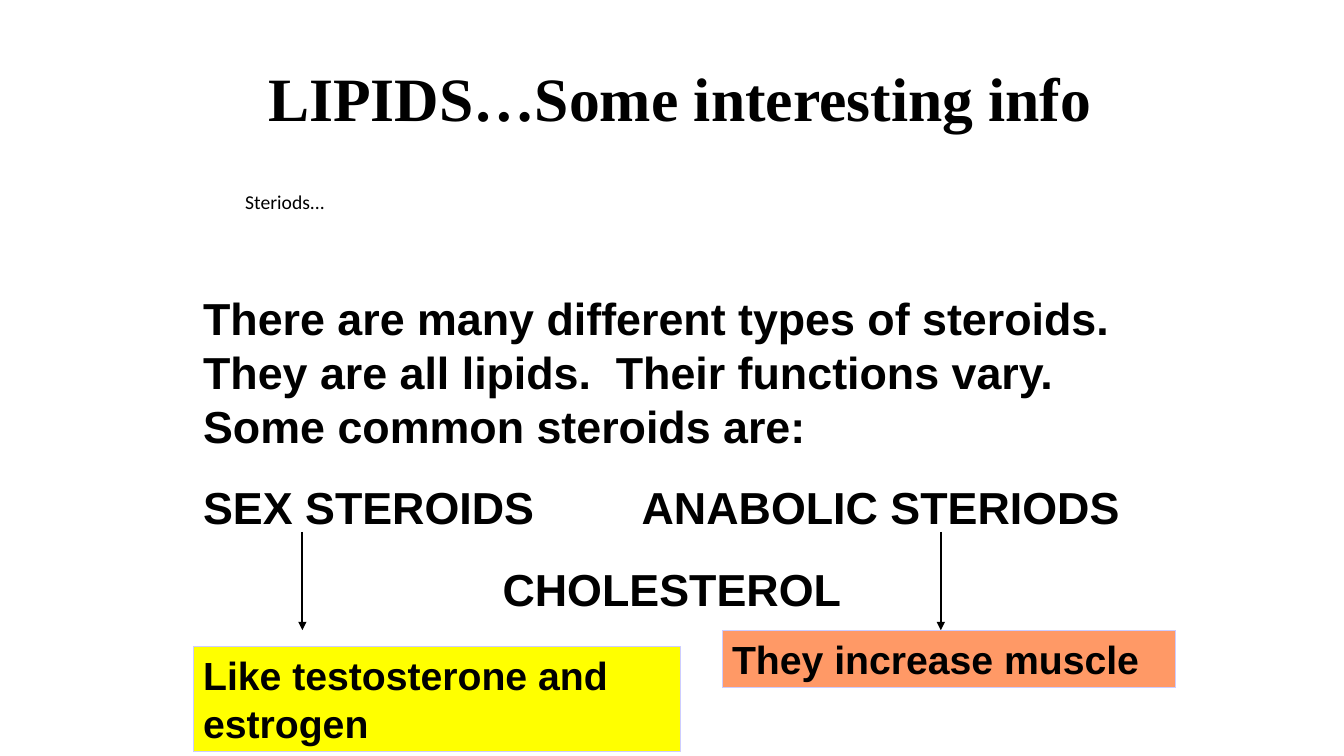
from dataclasses import dataclass

import pptx
import pptx.dml.color
import pptx.enum.shapes
import pptx.enum.text
import pptx.oxml.ns
import pptx.util
from lxml import etree

Cm = pptx.util.Cm
Pt = pptx.util.Pt
ALIGN = pptx.enum.text.PP_ALIGN
ANCHOR = pptx.enum.text.MSO_ANCHOR


@dataclass(frozen=True)
class Theme:
    ink: str = "000000"
    border: str = "CCCCFF"
    yellow: str = "FFFF00"
    orange: str = "FF9966"
    title_size: int = 44
    body_size: int = 32
    callout_size: int = 28
    note_size: int = 14
    title_font: str = "Times New Roman"
    body_font: str = "Arial"
    note_font: str = "Calibri"


THEME = Theme()
TITLE = {"name": THEME.title_font, "size": Pt(THEME.title_size), "bold": True}
BODY = {"name": THEME.body_font, "size": Pt(THEME.body_size), "bold": True}
CALLOUT = {**BODY, "size": Pt(THEME.callout_size)}
NOTE = {"name": THEME.note_font, "size": Pt(THEME.note_size), "bold": False}


def rgb(color):
    return pptx.dml.color.RGBColor.from_string(color)


def set_attributes(target, values):
    for name, value in values.items():
        setattr(target, name, value)


def add_child(parent, tag, **attributes):
    return etree.SubElement(parent, pptx.oxml.ns.qn(tag), attributes)


def write_paragraph(paragraph, text, font, **layout):
    run = paragraph.add_run()
    run.text = text
    set_attributes(run.font, font)
    run.font.color.rgb = rgb(THEME.ink)
    set_attributes(paragraph, {"alignment": ALIGN.LEFT, **layout})


def set_frame(shape, anchor=ANCHOR.TOP):
    set_attributes(shape.text_frame, {"word_wrap": True, "vertical_anchor": anchor})
    return shape.text_frame


def add_title(slide, text):
    title = slide.shapes.title
    set_attributes(title, {"left": Cm(6.35), "top": Cm(0.85),
                           "width": Cm(21.59), "height": Cm(3.18)})
    frame = set_frame(title, ANCHOR.MIDDLE)
    write_paragraph(frame.paragraphs[0], text, TITLE, alignment=ALIGN.CENTER)


def add_text(slide, left, top, width, height):
    return set_frame(slide.shapes.add_textbox(Cm(left), Cm(top), Cm(width), Cm(height)))


def add_body(slide):
    frame = add_text(slide, 4.87, 7.2, 24.13, 9.9)
    write_paragraph(
        frame.paragraphs[0],
        "There are many different types of steroids.  They are all lipids.  "
        "Their functions vary.  Some common steroids are:",
        BODY)
    kinds = frame.add_paragraph()
    write_paragraph(kinds, "SEX STEROIDS\tANABOLIC STERIODS", BODY, space_before=Pt(20))
    tabs = add_child(kinds._p.get_or_add_pPr(), "a:tabLst")
    add_child(tabs, "a:tab", pos=str(Cm(11.05)), algn="l")
    write_paragraph(frame.add_paragraph(), "CHOLESTEROL", BODY,
                    alignment=ALIGN.CENTER, space_before=Pt(20))


def add_down_arrow(slide, x, top, bottom):
    arrow = slide.shapes.add_connector(
        pptx.enum.shapes.MSO_CONNECTOR.STRAIGHT, Cm(x), Cm(top), Cm(x), Cm(bottom))
    arrow.line.color.rgb = rgb(THEME.ink)
    arrow.line.width = Pt(1.5)
    add_child(arrow.line._get_or_add_ln(), "a:tailEnd", type="triangle")
    add_child(arrow._element.spPr, "a:effectLst")


def add_callout(slide, text, fill, left, top, width, height):
    box = slide.shapes.add_shape(
        pptx.enum.shapes.MSO_SHAPE.RECTANGLE, Cm(left), Cm(top), Cm(width), Cm(height))
    box.shadow.inherit = False
    box.fill.solid()
    box.fill.fore_color.rgb = rgb(fill)
    box.line.color.rgb = rgb(THEME.border)
    box.line.width = Pt(0.75)
    write_paragraph(set_frame(box).paragraphs[0], text, CALLOUT)


def main():
    presentation = pptx.Presentation()
    presentation.slide_width = Cm(33.87)
    presentation.slide_height = Cm(19.05)
    slide = presentation.slides.add_slide(
        presentation.slide_layouts.get_by_name("Title Only"))

    add_title(slide, "LIPIDS…Some interesting info")
    note = add_text(slide, 5.93, 4.66, 8.33, 2.12)
    write_paragraph(note.paragraphs[0], "Steriods...", NOTE)
    add_body(slide)
    for x in (7.62, 23.71):
        add_down_arrow(slide, x, 13.4, 15.88)
    add_callout(slide, "Like testosterone and estrogen", THEME.yellow,
                4.87, 16.3, 12.28, 2.65)
    add_callout(slide, "They increase muscle", THEME.orange,
                18.2, 15.88, 11.43, 1.45)

    presentation.save("out.pptx")


if __name__ == "__main__":
    main()
